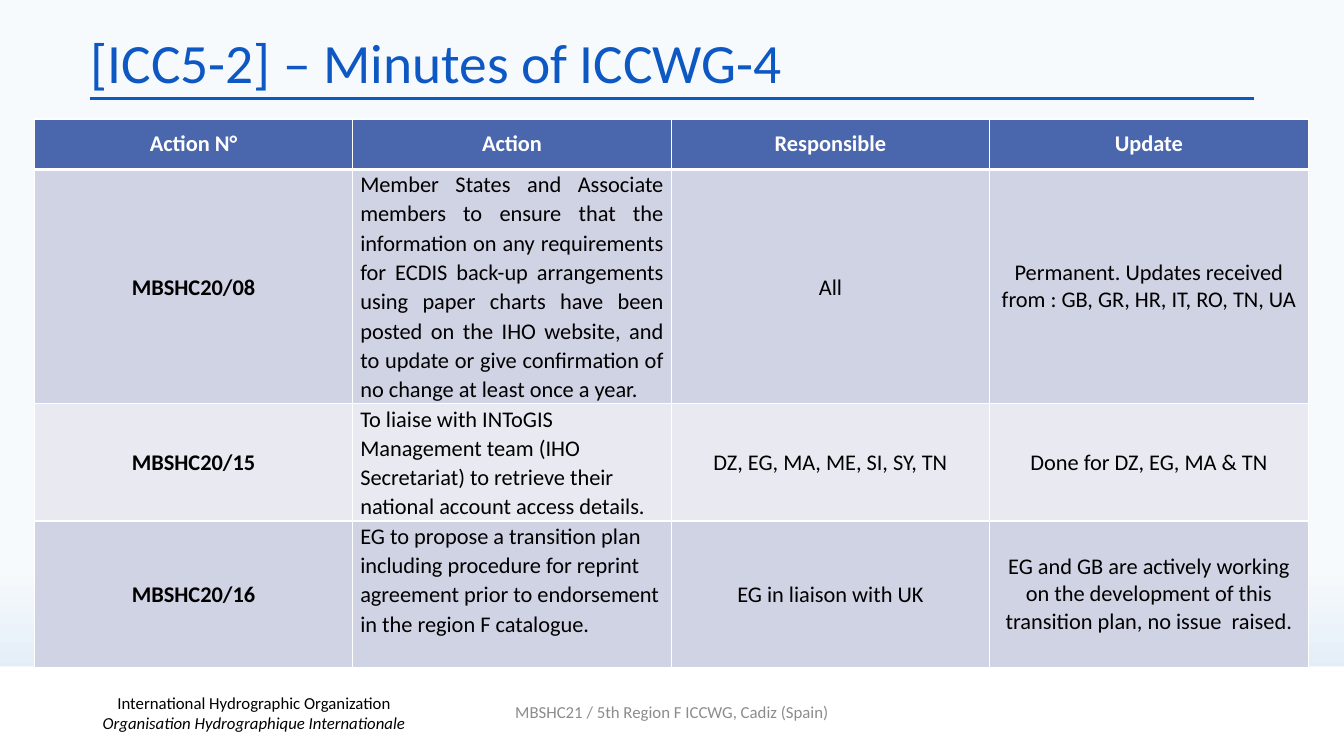
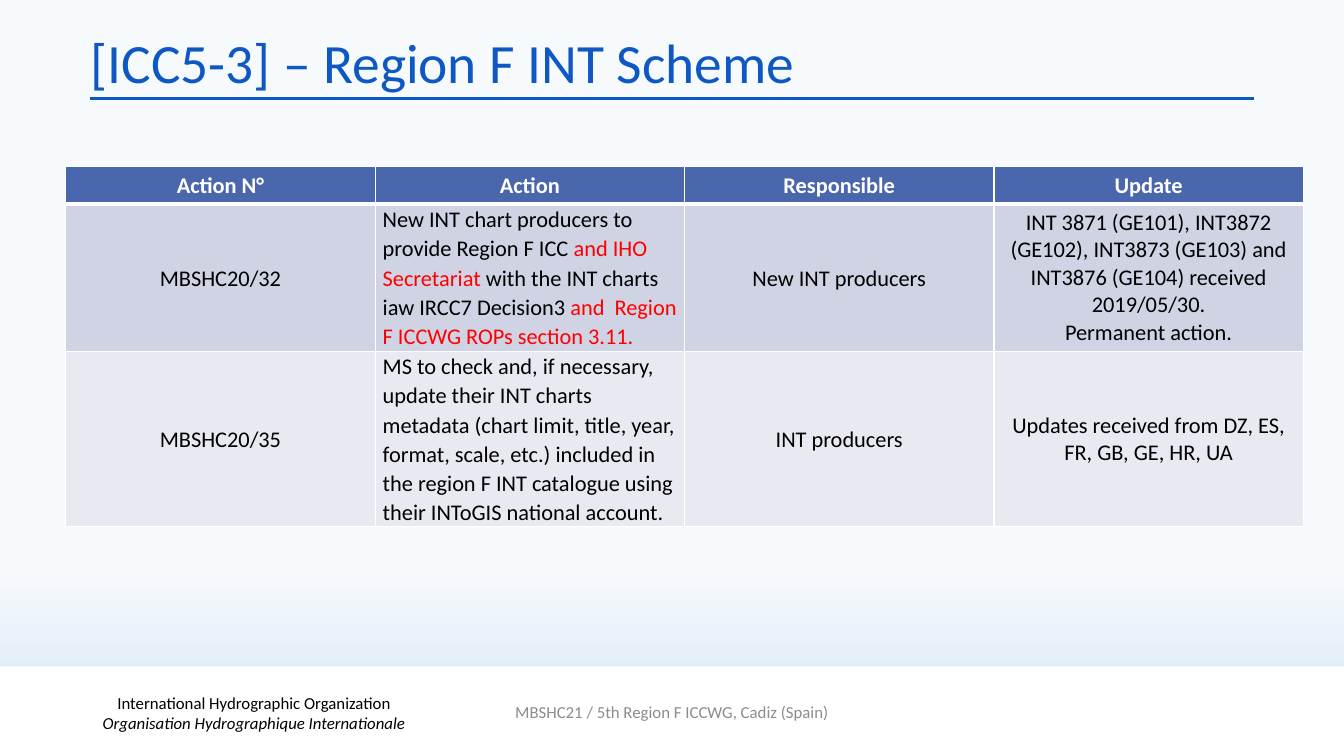
from dataclasses import dataclass

from lxml import etree
from pptx import Presentation
from pptx.dml.color import RGBColor
from pptx.enum.shapes import MSO_CONNECTOR, MSO_SHAPE
from pptx.enum.text import MSO_ANCHOR, MSO_AUTO_SIZE, PP_ALIGN
from pptx.oxml.ns import qn
from pptx.slide import Slide, SlideLayout
from pptx.table import _Cell
from pptx.text.text import TextFrame, _Paragraph
from pptx.util import Pt

LEFT, MID, FULL = PP_ALIGN.LEFT, PP_ALIGN.CENTER, PP_ALIGN.JUSTIFY
CENTRE = MSO_ANCHOR.MIDDLE
FIXED = MSO_AUTO_SIZE.NONE
RECT = MSO_SHAPE.RECTANGLE
STRAIGHT = MSO_CONNECTOR.STRAIGHT


@dataclass(frozen=True)
class Theme:
    font: str = "Calibri"
    blue: str = "0E58C4"
    head: str = "4A66AC"
    odd: str = "D0D3E3"
    even: str = "E9EAF1"
    white: str = "FFFFFF"
    black: str = "000000"
    red: str = "FF0000"
    grey: str = "8C8C8C"
    sky: str = "F7FAFD"
    sea: str = "D0E2F1"
    title: float = 39.6
    cell: float = 16
    foot: float = 12


@dataclass(frozen=True)
class Box:
    x: float
    y: float
    w: float
    h: float

    def points(self) -> tuple[Pt, Pt, Pt, Pt]:
        return Pt(self.x), Pt(self.y), Pt(self.w), Pt(self.h)


@dataclass(frozen=True)
class Run:
    text: str
    hue: str = "000000"
    bold: bool = False
    slant: bool = False


Lines = list[list[Run]]


@dataclass(frozen=True)
class Row:
    high: float
    code: str
    task: Lines
    who: str
    news: list[str]
    align: PP_ALIGN = LEFT
    below: float = 0


@dataclass(frozen=True)
class Page:
    title: str
    x: float
    y: float
    wide: float
    high: float
    bold: bool
    rows: list[Row]


T = Theme()
HEADS = ["Action N°", "Action", "Responsible", "Update"]
TITLE = Box(57.6, 21.6, 707, 50.4)
BAND = Box(0, 476, 960, 66)
NAME = Box(19.5, 494.6, 324, 28.8)
EVENT = Box(318, 494, 324, 28.8)

PAGES = [
    Page("[ICC5-2] – Minutes of ICCWG-4", 24.5, 85, 227.5, 36, True, [
        Row(167, "MBSHC20/08",
            [[Run("Member States and Associate members to ensure that the information on any "
                  "requirements for ECDIS back-up arrangements using paper charts have been "
                  "posted on the IHO website, and to update or give confirmation of no change "
                  "at least once a year.")]],
            "All", ["Permanent. Updates received from : GB, GR, HR, IT, RO, TN, UA"], FULL),
        Row(83.5, "MBSHC20/15",
            [[Run("To liaise with INToGIS Management team (IHO Secretariat) to retrieve their "
                  "national account access details.")]],
            "DZ, EG, MA, ME, SI, SY, TN", ["Done for DZ, EG, MA & TN"]),
        Row(104.5, "MBSHC20/16",
            [[Run("EG to propose a transition plan including procedure for reprint agreement "
                  "prior to endorsement in the region F catalogue.")]],
            "EG in liaison with UK",
            ["EG and GB are actively working on the development of this transition plan, "
             "no issue  raised."], below=21),
    ]),
    Page("[ICC5-3] – Region F INT Scheme", 47, 119, 221, 26.5, False, [
        Row(105, "MBSHC20/32",
            [[Run("New INT chart producers to provide Region F ICC "),
              Run("and IHO Secretariat ", T.red),
              Run("with the INT charts iaw IRCC7 Decision3 "),
              Run("and  Region F ICCWG ROPs section 3.11.", T.red)]],
            "New INT producers",
            ["INT 3871 (GE101), INT3872 (GE102), INT3873 (GE103) and INT3876 (GE104) "
             "received 2019/05/30.", "Permanent action."]),
        Row(125.5, "MBSHC20/35",
            [[Run("MS to check and, if necessary, update their INT charts metadata (chart "
                  "limit, title, year, format, scale, etc.) included in the region F INT "
                  "catalogue using their INToGIS national account.")]],
            "INT producers", ["Updates received from DZ, ES, FR, GB, GE, HR, UA"]),
    ]),
]


def tint(code: str) -> RGBColor:
    return RGBColor.from_string(code)


def write(para: _Paragraph, run: Run, size: float) -> None:
    part = para.add_run()
    part.text = run.text
    font = part.font
    font.name, font.size = T.font, Pt(size)
    font.bold, font.italic = run.bold, run.slant
    font.color.rgb = tint(run.hue)


def fill_text(frame: TextFrame, lines: Lines, size: float, align: PP_ALIGN,
              space: float = 1) -> None:
    for i, runs in enumerate(lines):
        para = frame.add_paragraph() if i else frame.paragraphs[0]
        para.alignment, para.line_spacing = align, space
        for run in runs:
            write(para, run, size)


def add_label(slide: Slide, box: Box, lines: Lines) -> None:
    frame = slide.shapes.add_textbox(*box.points()).text_frame
    frame.word_wrap, frame.auto_size = True, FIXED
    frame.vertical_anchor = CENTRE
    fill_text(frame, lines, T.foot, MID)


def add_frame(slide: Slide, layout: SlideLayout) -> None:
    for holder in list(layout.placeholders)[1:]:
        layout.shapes.element.remove(holder.element)
    fill = layout.background.fill
    fill.gradient()
    fill.gradient_angle = 270
    for stop, hue, place in zip(fill.gradient_stops, (T.sky, T.sea), (0.75, 1)):
        stop.color.rgb, stop.position = tint(hue), place

    rule = slide.shapes.add_connector(STRAIGHT, Pt(64), Pt(70.6), Pt(896), Pt(70.6))
    rule.line.color.rgb, rule.line.width = tint(T.blue), Pt(2.25)
    etree.SubElement(rule.element.spPr, qn("a:effectLst"))
    band = slide.shapes.add_shape(RECT, *BAND.points())
    band.shadow.inherit = False
    band.fill.solid()
    band.fill.fore_color.rgb = tint(T.white)
    band.line.fill.background()
    add_label(slide, NAME, [
        [Run("International Hydrographic Organization")],
        [Run("Organisation Hydrographique Internationale", slant=True)]])
    for shape in list(slide.shapes)[1:]:
        layout.shapes.element.append(shape.element)


def add_title(slide: Slide, text: str) -> None:
    title = slide.shapes.title
    title.left, title.top, title.width, title.height = TITLE.points()
    frame = title.text_frame
    frame.auto_size, frame.vertical_anchor = FIXED, CENTRE
    fill_text(frame, [[Run(text, T.blue)]], T.title, LEFT, 0.9)


def style(cell: _Cell, hue: str, base: float) -> None:
    props = cell._tc.get_or_add_tcPr()
    for side, width in (("L", 1), ("R", 1), ("T", 1), ("B", base)):
        line = etree.SubElement(props, qn(f"a:ln{side}"), w=str(Pt(width)))
        solid = etree.SubElement(line, qn("a:solidFill"))
        etree.SubElement(solid, qn("a:srgbClr"), val=T.white)
    cell.fill.solid()
    cell.fill.fore_color.rgb = tint(hue)
    cell.vertical_anchor = CENTRE


def tighten(cell: _Cell, below: float) -> None:
    cell.margin_left = cell.margin_right = Pt(5.4)
    cell.margin_top, cell.margin_bottom = Pt(0), Pt(below)


def add_grid(slide: Slide, page: Page) -> None:
    highs = [page.high] + [row.high for row in page.rows]
    box = Box(page.x, page.y, page.wide * len(HEADS), sum(highs))
    grid = slide.shapes.add_table(len(highs), len(HEADS), *box.points()).table
    grid.horz_banding = False
    for col in grid.columns:
        col.width = Pt(page.wide)
    for line, high in zip(grid.rows, highs):
        line.height = Pt(high)
    for j, head in enumerate(HEADS):
        cell = grid.cell(0, j)
        style(cell, T.head, 3)
        fill_text(cell.text_frame, [[Run(head, T.white, True)]], T.cell, MID)
    for i, row in enumerate(page.rows, 1):
        texts = [[[Run(row.code, bold=page.bold)]], row.task, [[Run(row.who)]],
                 [[Run(text)] for text in row.news]]
        for j, lines in enumerate(texts):
            cell = grid.cell(i, j)
            style(cell, T.odd if i % 2 else T.even, 1)
            last = j == len(texts) - 1
            if not last:
                tighten(cell, row.below if j == 1 else 0)
            fill_text(cell.text_frame, lines, T.cell, row.align if j == 1 else MID,
                      1 if last else 1.07)


def main() -> None:
    deck = Presentation()
    deck.slide_width, deck.slide_height = Pt(960), Pt(540)
    layout = deck.slide_layouts[5]
    for i, page in enumerate(PAGES):
        slide = deck.slides.add_slide(layout)
        if i == 0:
            add_frame(slide, layout)
        add_title(slide, page.title)
        add_grid(slide, page)
        add_label(slide, EVENT, [[Run("MBSHC21 / 5th Region F ICCWG, Cadiz (Spain)", T.grey)]])
    deck.save("out.pptx")


if __name__ == "__main__":
    main()
